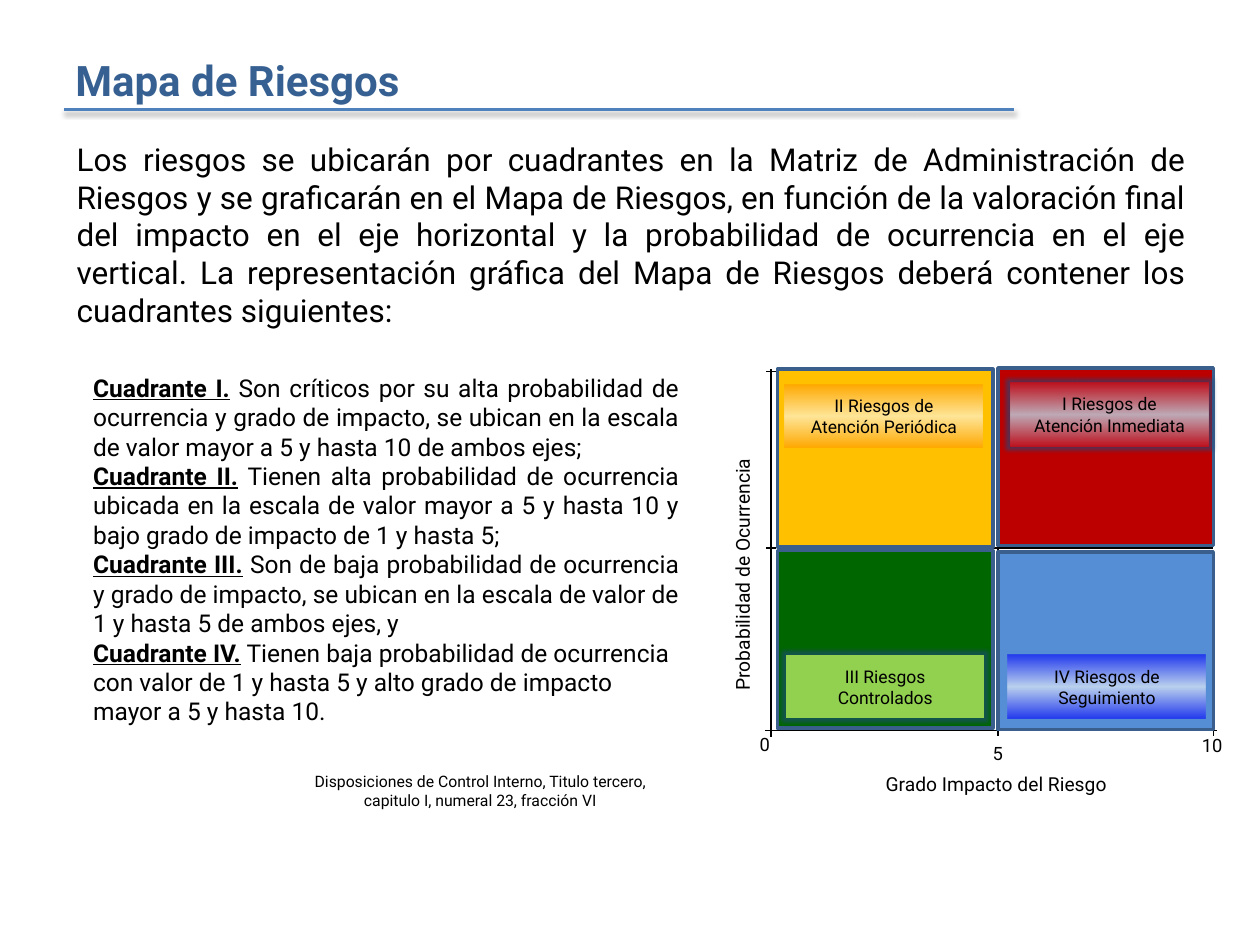
from pptx import Presentation
from pptx.dml.color import RGBColor
from pptx.enum.shapes import MSO_CONNECTOR, MSO_SHAPE
from pptx.enum.text import MSO_ANCHOR, PP_ALIGN
from pptx.oxml import parse_xml
from pptx.oxml.ns import nsdecls, qn
from pptx.util import Inches, Pt

FONT = "Roboto"
BLACK = RGBColor(0x00, 0x00, 0x00)
TITLE_BLUE = RGBColor(0x37, 0x60, 0x92)
RULE_BLUE = RGBColor(0x4F, 0x81, 0xBD)
BORDER_BLUE = RGBColor(0x3A, 0x5F, 0x8C)
RED = RGBColor(0xBC, 0x00, 0x00)
AMBER = RGBColor(0xFF, 0xC0, 0x00)
SKY = RGBColor(0x55, 0x8E, 0xD5)
GREEN = RGBColor(0x00, 0x66, 0x00)
LIME = RGBColor(0x92, 0xD0, 0x50)
GLOSS_RED = RGBColor(0xFF, 0x00, 0x00)
GLOSS_ORANGE = RGBColor(0xFF, 0x99, 0x00)
GLOSS_BLUE = RGBColor(0x00, 0x00, 0xFF)
WHITE = RGBColor(0xFF, 0xFF, 0xFF)

INTRO = (
    "Los riesgos se ubicarán por cuadrantes en la Matriz de Administración de Riesgos "
    "y se graficarán en el Mapa de Riesgos, en función de la valoración final del impacto "
    "en el eje horizontal y la probabilidad de ocurrencia en el eje vertical. "
    "La representación gráfica del Mapa de Riesgos deberá contener los cuadrantes siguientes:"
)
DEFINITIONS = [
    ("Cuadrante I.", " Son críticos por su alta probabilidad de ocurrencia y grado de impacto, "
     "se ubican en la escala de valor mayor a 5 y hasta 10 de ambos ejes;", PP_ALIGN.JUSTIFY),
    ("Cuadrante II.", " Tienen alta probabilidad de ocurrencia ubicada en la escala de valor "
     "mayor a 5 y hasta 10 y bajo grado de impacto de 1 y hasta 5;", PP_ALIGN.JUSTIFY),
    ("Cuadrante III.", " Son de baja probabilidad de ocurrencia y grado de impacto, se ubican "
     "en la escala de valor de 1 y hasta 5 de ambos ejes, y", PP_ALIGN.JUSTIFY),
    ("Cuadrante IV.", " Tienen baja probabilidad de ocurrencia con valor de 1 y hasta 5 y alto "
     "grado de impacto mayor a 5 y hasta 10.", PP_ALIGN.LEFT),
]
SHADOW = (
    '<a:outerShdw blurRad="39370" dist="20320" dir="5400000" rotWithShape="0">'
    '<a:srgbClr val="000000"><a:alpha val="38000"/></a:srgbClr></a:outerShdw>'
)
GLOW = (
    '<a:glow rad="63500"><a:srgbClr val="1F497D">'
    '<a:alpha val="60000"/></a:srgbClr></a:glow>'
)


def set_effect(shape, effect=""):
    shape._element.spPr.append(
        parse_xml(f'<a:effectLst {nsdecls("a")}>{effect}</a:effectLst>'))


def set_gloss(shape, color):
    stops = "".join(
        f'<a:gs pos="{position}"><a:srgbClr val="{shade}"><a:alpha val="60000"/></a:srgbClr></a:gs>'
        for position, shade in ((0, color), (50000, WHITE), (100000, color)))
    gradient = parse_xml(
        f'<a:gradFill {nsdecls("a")} rotWithShape="1"><a:gsLst>{stops}</a:gsLst>'
        '<a:lin ang="5400000" scaled="1"/></a:gradFill>')
    shape.fill.background()
    properties = shape._element.spPr
    properties.replace(properties.find(qn("a:noFill")), gradient)


def style_para(para, size, align, color=BLACK):
    para.alignment = align
    para.font.name = FONT
    para.font.size = Pt(size)
    para.font.color.rgb = color


def add_text(page, left, top, width, height, text, size,
             align=PP_ALIGN.JUSTIFY, color=BLACK, wrap=True):
    box = page.shapes.add_textbox(Inches(left), Inches(top), Inches(width), Inches(height))
    box.text_frame.word_wrap = wrap
    para = box.text_frame.paragraphs[0]
    para.text = text
    style_para(para, size, align, color)
    return box


def add_line(page, x1, y1, x2, y2, width, color=BLACK, effect=""):
    line = page.shapes.add_connector(
        MSO_CONNECTOR.STRAIGHT, Inches(x1), Inches(y1), Inches(x2), Inches(y2))
    line.line.color.rgb = color
    line.line.width = Pt(width)
    set_effect(line, effect)


def add_header(page, left, top, width, height):
    title = add_text(page, left, top, width, height, "Mapa de Riesgos", 24,
                     PP_ALIGN.LEFT, TITLE_BLUE)
    title.text_frame.vertical_anchor = MSO_ANCHOR.MIDDLE
    title.text_frame.paragraphs[0].font.bold = True
    add_line(page, left + 0.01, top + 0.53, left + 7.55, top + 0.53, 2, RULE_BLUE, SHADOW)


def add_definitions(page, left, top, width, height):
    box = page.shapes.add_textbox(Inches(left), Inches(top), Inches(width), Inches(height))
    frame = box.text_frame
    frame.word_wrap = True
    for index, (term, meaning, align) in enumerate(DEFINITIONS):
        para = frame.paragraphs[0] if index == 0 else frame.add_paragraph()
        span = para.add_run()
        span.text = term
        span.font.bold = True
        span.font.underline = True
        para.add_run().text = meaning
        style_para(para, 14, align)


def add_quadrant(page, left, top, color):
    square = page.shapes.add_shape(
        MSO_SHAPE.RECTANGLE, Inches(left), Inches(top), Inches(1.71), Inches(1.41))
    square.shadow.inherit = False
    square.fill.solid()
    square.fill.fore_color.rgb = color
    square.line.color.rgb = BORDER_BLUE
    square.line.width = Pt(2)


def add_label(page, left, top, lines, color, gloss, glow):
    label = page.shapes.add_shape(
        MSO_SHAPE.ACTION_BUTTON_CUSTOM, Inches(left), Inches(top), Inches(1.57), Inches(0.5))
    if gloss:
        set_gloss(label, color)
    else:
        label.fill.solid()
        label.fill.fore_color.rgb = color
    label.line.fill.background()
    set_effect(label, GLOW if glow else "")
    frame = label.text_frame
    frame.word_wrap = False
    frame.vertical_anchor = MSO_ANCHOR.MIDDLE
    for index, text in enumerate(lines):
        para = frame.paragraphs[0] if index == 0 else frame.add_paragraph()
        para.text = text
        style_para(para, 10, PP_ALIGN.CENTER)


def add_risk_map(page, left, top):
    axis, middle, end = left + 0.19, left + 1.99, left + 3.7
    high, center, base = top + 0.03, top + 1.43, top + 2.88

    add_line(page, middle, high, middle, base - 0.07, 1.5)
    add_line(page, axis + 0.09, center, end, center, 1.5)
    add_line(page, axis, top + 0.01, axis, base + 0.05, 0.75)
    add_line(page, end + 0.03, base, axis - 0.05, base, 0.75)
    for x in (middle, end):
        add_line(page, x, base - 0.04, x, base + 0.04, 0.75)
    for y in (center, high):
        add_line(page, axis - 0.04, y, axis + 0.04, y, 0.75)

    for text, x, y, width in (("5", 1.85, 2.92, 0.28), ("10", 3.51, 2.86, 0.37),
                              ("0", 0, 2.85, 0.28)):
        add_text(page, left + x, top + y, width, 0.28, text, 10.5, wrap=False)

    for x, y, color in ((1.99, 0, RED), (0.24, 0.01, AMBER),
                        (1.99, 1.46, SKY), (0.24, 1.45, GREEN)):
        add_quadrant(page, left + x, top + y, color)

    for x, y, lines, color, gloss, glow in (
        (2.09, 0.12, ("I Riesgos de", "Atención Inmediata"), GLOSS_RED, True, True),
        (0.3, 0.13, ("II Riesgos de", "Atención Periódica"), GLOSS_ORANGE, True, False),
        (2.07, 2.28, ("IV Riesgos de", "Seguimiento"), GLOSS_BLUE, True, False),
        (0.31, 2.28, ("III Riesgos", "Controlados"), LIME, False, True),
    ):
        add_label(page, left + x, top + y, lines, color, gloss, glow)

    vertical = add_text(page, left - 1.18, top + 1.37, 2.29, 0.29,
                        "Probabilidad de Ocurrencia", 11)
    vertical.rotation = 270
    add_text(page, left + 1, top + 3.16, 2.27, 0.29, "Grado Impacto del Riesgo", 11)


def main():
    deck = Presentation()
    deck.slide_width = Inches(10)
    deck.slide_height = Inches(7.5)
    page = deck.slides.add_slide(deck.slide_layouts[6])
    add_text(page, 0.51, 1.06, 9, 1.62, INTRO, 18)
    add_header(page, 0.5, 0.34, 9, 0.58)
    add_definitions(page, 0.64, 2.91, 4.85, 2.93)
    add_risk_map(page, 5.93, 2.92)
    add_text(page, 2.29, 6.08, 3.04, 0.4,
             "Disposiciones de Control Interno, Titulo tercero, capitulo I, "
             "numeral 23, fracción VI", 9, PP_ALIGN.CENTER)
    deck.save("out.pptx")


if __name__ == "__main__":
    main()
